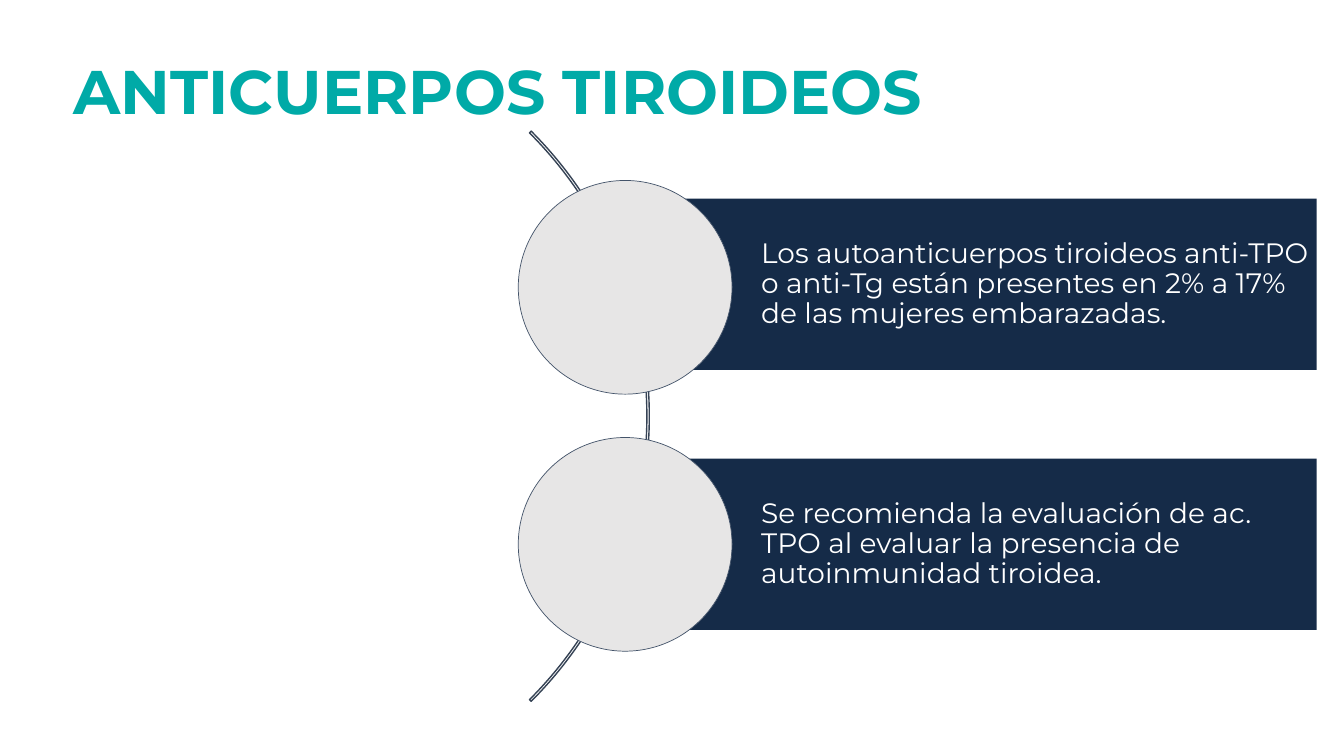
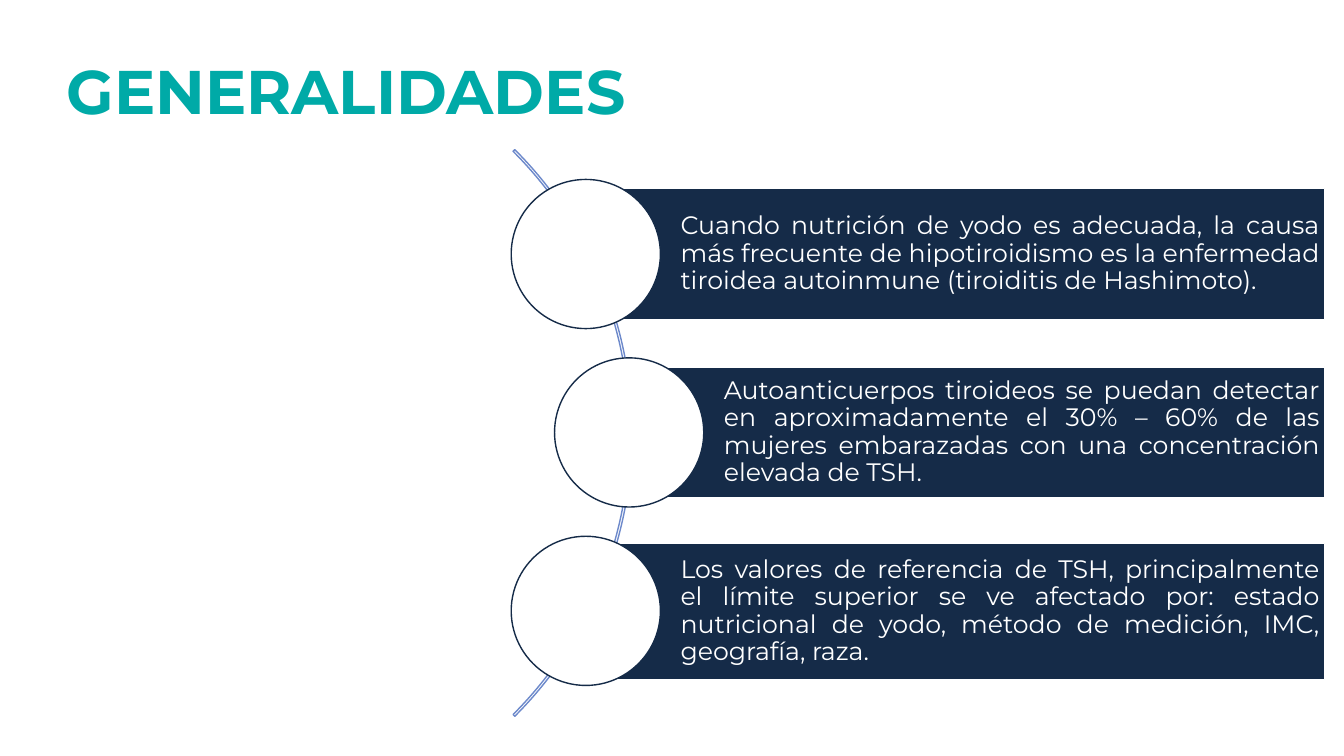
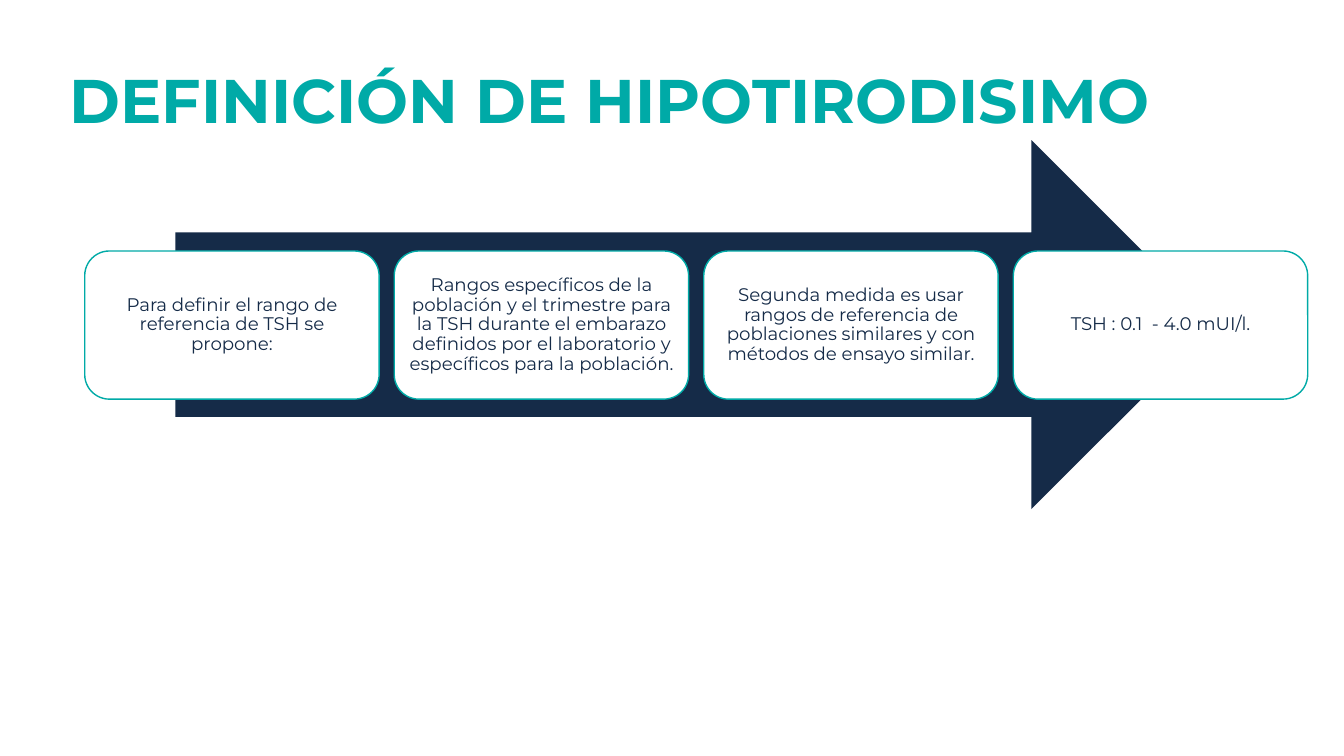
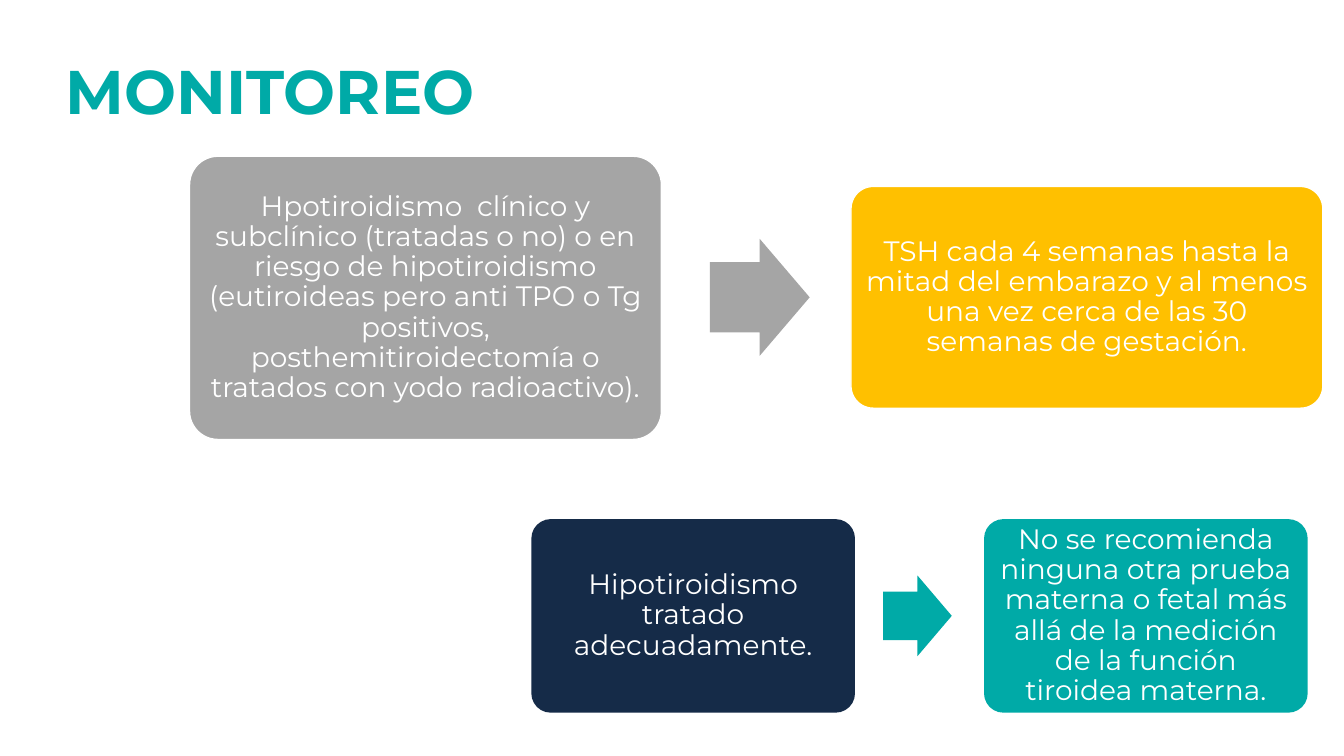
from pptx import Presentation
from pptx.dml.color import RGBColor
from pptx.enum import shapes, text
from pptx.util import Inches, Pt

COLORS = {
    "teal": "00AAA7", "navy": "152B48", "white": "FFFFFF",
    "pale": "E7E6E6", "slate": "44546A", "arc": "364355",
    "arc_blue": "6D89CB", "gray": "A5A5A5", "yellow": "FFC000",
}
FONT = "Montserrat"
SHAPE = shapes.MSO_SHAPE
ALIGN = text.PP_ALIGN

deck = Presentation()
deck.slide_width, deck.slide_height = Inches(13.33), Inches(7.5)


def add_page(title, left, top=0.21):
    """Add a page with the shared title style."""
    page = deck.slides.add_slide(deck.slide_layouts[5])
    box = page.shapes.title
    box.left, box.top = Inches(left), Inches(top)
    box.width, box.height = Inches(11.5), Inches(1.45)
    frame = box.text_frame
    frame.auto_size = text.MSO_AUTO_SIZE.NONE
    frame.vertical_anchor = text.MSO_ANCHOR.MIDDLE
    para = frame.paragraphs[0]
    para.alignment, para.line_spacing = ALIGN.LEFT, 0.9
    span = para.add_run()
    span.text = title
    span.font.name, span.font.size, span.font.bold = FONT, Pt(44), True
    span.font.color.rgb = RGBColor.from_string(COLORS["teal"])
    return page


def add_block(page, kind, at, fill=None, line=None, weight=1, adjust=(),
              words=None, size=20, color="white", align=ALIGN.CENTER,
              margin=0.08, indent=None):
    """Add a flat preset shape, with its text if there is any."""
    block = page.shapes.add_shape(kind, *[Inches(value) for value in at])
    block.shadow.inherit = False
    for index, value in enumerate(adjust):
        block.adjustments[index] = value
    if fill:
        block.fill.solid()
        block.fill.fore_color.rgb = RGBColor.from_string(COLORS[fill])
    else:
        block.fill.background()
    if line:
        block.line.color.rgb = RGBColor.from_string(COLORS[line])
        block.line.width = Pt(weight)
    else:
        block.line.fill.background()
    if words:
        frame = block.text_frame
        frame.word_wrap = True
        frame.vertical_anchor = text.MSO_ANCHOR.MIDDLE
        frame.margin_top = frame.margin_bottom = Inches(margin)
        frame.margin_right = Inches(margin)
        frame.margin_left = Inches(margin if indent is None else indent)
        para = frame.paragraphs[0]
        para.alignment, para.line_spacing = align, 0.9
        span = para.add_run()
        span.text = words
        span.font.name, span.font.size = FONT, Pt(size)
        span.font.color.rgb = RGBColor.from_string(COLORS[color])


ARC = (189, 27, 0.003)

# Thyroid antibodies: two bars along an arc
page = add_page("ANTICUERPOS TIROIDEOS", 0.63)
add_block(page, SHAPE.BLOCK_ARC, (-1.56, 0.13, 8, 8), line="arc", adjust=ARC)
antibodies = [
    (1.97, 1.79, "Los autoanticuerpos tiroideos anti-TPO o anti-Tg están "
     "presentes en 2% a 17% de las mujeres embarazadas."),
    (4.55, 4.34, "Se recomienda la evaluación de ac. TPO al evaluar la "
     "presencia de autoinmunidad tiroidea."),
]
for bar_top, circle_top, words in antibodies:
    add_block(page, SHAPE.RECTANGLE, (6.2, bar_top, 6.86, 1.7), "navy",
              words=words, align=ALIGN.LEFT, margin=0.06, indent=1.35)
    add_block(page, SHAPE.OVAL, (5.14, circle_top, 2.12, 2.12), "pale",
              "slate", 0.5)

# Overview: three bars along an arc
page = add_page("GENERALIDADES", 0.56)
add_block(page, SHAPE.BLOCK_ARC, (-1.68, 0.32, 7.95, 7.95), line="arc_blue",
          adjust=ARC)
overview = [
    (5.81, 1.87, 1.3, "Cuando nutrición de yodo es adecuada, la causa más "
     "frecuente de hipotiroidismo es la enfermedad tiroidea autoinmune "
     "(tiroiditis de Hashimoto)."),
    (6.24, 3.64, 1.3, "Autoanticuerpos tiroideos se puedan detectar en "
     "aproximadamente el 30% – 60% de las mujeres embarazadas con una "
     "concentración elevada de TSH."),
    (5.81, 5.39, 1.35, "Los valores de referencia de TSH, principalmente el "
     "límite superior se ve afectado por: estado nutricional de yodo, método "
     "de medición, IMC, geografía, raza."),
]
for index, (left, top, height, words) in enumerate(overview):
    add_block(page, SHAPE.RECTANGLE, (left, top, 13.14 - left, height),
              "navy", "white", words=words, size=18, align=ALIGN.JUSTIFY,
              margin=0.05, indent=0.94)
    add_block(page, SHAPE.OVAL, (left - 0.74, 1.78 + index * 1.77, 1.48, 1.48),
              "white", "navy")

# Definition: four steps over an arrow
page = add_page("DEFINICIÓN DE HIPOTIRODISIMO", 0.59, 0.3)
add_block(page, SHAPE.RIGHT_ARROW, (1.74, 1.39, 10.32, 3.66), "navy")
steps = [
    "Para definir el rango de referencia de TSH se propone:",
    "Rangos específicos de la población y el trimestre para la TSH durante "
    "el embarazo definidos por el laboratorio y específicos para la "
    "población.",
    "Segunda medida es usar rangos de referencia de poblaciones similares y "
    "con métodos de ensayo similar.",
    "TSH : 0.1  - 4.0 mUI/l.",
]
for index, words in enumerate(steps):
    add_block(page, SHAPE.ROUNDED_RECTANGLE,
              (0.84 + index * 3.07, 2.49, 2.92, 1.47), "white", "teal",
              words=words, size=13, color="navy", margin=0.05)

# Monitoring: two flows, each a case, an arrow and its follow-up
page = add_page("MONITOREO", 0.55)
cards = [
    ((1.88, 1.55, 4.68, 2.81), "gray", "white",
     "Hpotiroidismo  clínico y subclínico (tratadas o no) o en riesgo de "
     "hipotiroidismo (eutiroideas pero anti TPO o Tg positivos, "
     "posthemitiroidectomía o tratados con yodo radioactivo)."),
    ((8.44, 1.85, 4.68, 2.2), "yellow", "white",
     "TSH cada 4 semanas hasta la mitad del embarazo y al menos una vez "
     "cerca de las 30 semanas de gestación."),
    ((5.27, 5.15, 3.21, 1.92), "navy", None,
     "Hipotiroidismo tratado adecuadamente."),
    ((9.76, 5.15, 3.21, 1.92), "teal", None,
     "No se recomienda ninguna otra prueba materna o fetal más allá de la "
     "medición de la función tiroidea materna."),
]
for at, fill, line, words in cards:
    add_block(page, SHAPE.ROUNDED_RECTANGLE, at, fill, line, adjust=(0.1,),
              words=words)
for at, fill in [((7.04, 2.37, 0.99, 1.16), "gray"),
                 ((8.76, 5.71, 0.68, 0.8), "teal")]:
    add_block(page, SHAPE.RIGHT_ARROW, at, fill, adjust=(0.6, 0.5))

deck.save("out.pptx")
